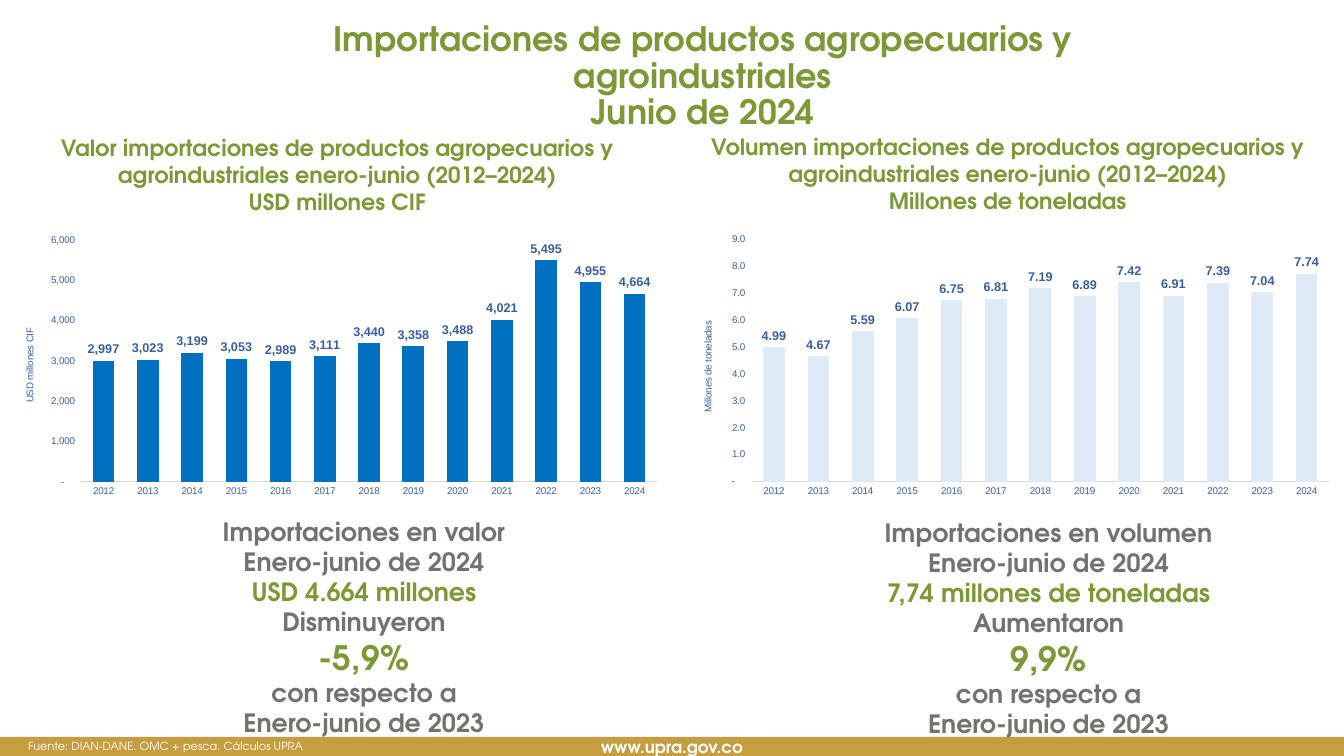
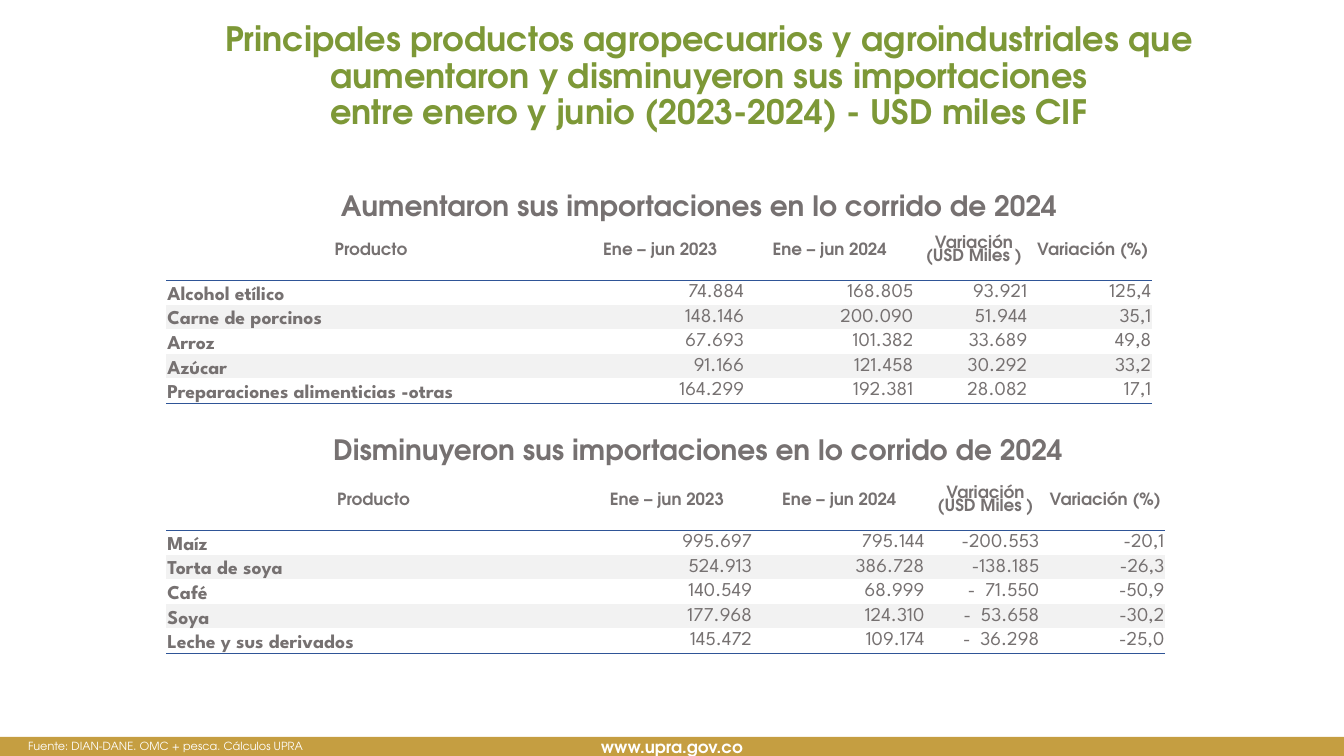
from dataclasses import dataclass
from pptx import Presentation
from pptx.chart.data import CategoryChartData
from pptx.dml.color import RGBColor
from pptx.enum.chart import XL_CHART_TYPE, XL_LABEL_POSITION, XL_TICK_MARK
from pptx.enum.shapes import MSO_SHAPE
from pptx.enum.text import MSO_ANCHOR, PP_ALIGN
from pptx.oxml import parse_xml
from pptx.oxml.ns import nsdecls, qn
from pptx.util import Inches, Pt


@dataclass(frozen=True)
class Theme:
    green: str = "7D9837"
    gray: str = "767171"
    gold: str = "C59E41"
    white: str = "FFFFFF"
    stripe: str = "F2F2F2"
    rule: str = "2F5597"
    label: str = "395F9B"
    axis: str = "D9D9D9"
    head: str = "TeX Gyre Adventor"
    body: str = "League Spartan"
    chart: str = "Arial"
    title: int = 24
    section: int = 20
    fact: int = 18
    subtitle: int = 16
    cell: int = 14
    small: int = 12
    value: int = 9
    source: int = 8
    tick: int = 7


T = Theme()


def write(tf, lines, align=PP_ALIGN.CENTER, bold=True, font=T.head):
    tf.word_wrap = True
    for i, (text, size, color) in enumerate(lines):
        p = tf.add_paragraph() if i else tf.paragraphs[0]
        p.alignment = align
        for j, part in enumerate(text.split("\n")):
            if j:
                p.add_line_break()
            r = p.add_run()
            r.text = part
            r.font.name, r.font.size, r.font.bold = font, Pt(size), bold
            r.font.color.rgb = RGBColor.from_string(color)


def place(parent, index, target, **fractions):
    for old in parent.findall(qn("c:layout")):
        parent.remove(old)
    modes = "".join(f'<c:{k}Mode val="edge"/>' for k in "xy")
    values = "".join(f'<c:{k} val="{v}"/>' for k, v in fractions.items())
    parent.insert(index, parse_xml(
        f'<c:layout {nsdecls("c")}><c:manualLayout>{target}{modes}{values}'
        '</c:manualLayout></c:layout>'))


prs = Presentation()
prs.slide_width, prs.slide_height = Inches(13.33), Inches(7.5)

titles = [
    (2.16, 9.62, "Importaciones de productos agropecuarios y agroindustriales\n"
                 "Junio de 2024"),
    (2.11, 9.84, "Principales productos agropecuarios y agroindustriales que "
                 "aumentaron y disminuyeron sus importaciones\n"
                 "entre enero y junio (2023-2024) - USD miles CIF"),
]
for left, width, title in titles:
    s = prs.slides.add_slide(prs.slide_layouts[5])
    sp = s.shapes.title
    sp.left, sp.top = Inches(left), Inches(0.23)
    sp.width, sp.height = Inches(width), Inches(1.07)
    sp.text_frame.vertical_anchor = MSO_ANCHOR.MIDDLE
    write(sp.text_frame, [(title, T.title, T.green)])
    sp.text_frame.paragraphs[0].line_spacing = 0.9

    band = s.shapes.add_shape(MSO_SHAPE.RECTANGLE, 0, Inches(7.31),
                              prs.slide_width, Inches(0.19))
    band.shadow.inherit = False
    band.fill.solid()
    band.fill.fore_color.rgb = RGBColor.from_string(T.gold)
    band.line.fill.background()
    tf = band.text_frame
    tf.margin_top = tf.margin_bottom = 0
    tf.vertical_anchor = MSO_ANCHOR.MIDDLE
    write(tf, [("www.upra.gov.co", T.small, T.white)])

    source = s.shapes.add_textbox(Inches(0.18), Inches(7.29), Inches(12.91), Inches(0.24))
    write(source.text_frame,
          [("Fuente: DIAN-DANE. OMC + pesca. Cálculos UPRA", T.source, T.white)],
          PP_ALIGN.JUSTIFY, False)

s = prs.slides[0]
years = [str(y) for y in range(2012, 2025)]
thousands = r'_-* #,##0_-;\-* #,##0_-;_-* "-"??_-;_-@_-'
tenths = r'_-* #,##0.0_-;\-* #,##0.0_-;_-* "-"??_-;_-@_-'
panels = [
    dict(kind="Valor", unit="USD millones CIF", sub=(0.02, 1.28), fact=(1.46, 5.07),
         amount="USD 4.664 millones", verb="Disminuyeron", change="-5,9%",
         at=(0, 2.03, 6.62), plot=(0.122, 0.102), axis_title=(0.033, 0.35),
         color="0070C0", top=6000, step=1000, fmt=thousands, label_fmt=thousands,
         values=[2997, 3023, 3199, 3053, 2989, 3111, 3440, 3358, 3488, 4021,
                 5495, 4955, 4664]),
    dict(kind="Volumen", unit="Millones de toneladas", sub=(6.67, 1.27), fact=(8.25, 5.08),
         amount="7,74 millones de toneladas", verb="Aumentaron", change="9,9%",
         at=(6.56, 2, 6.64), plot=(0.135, 0.11), axis_title=(0.058, 0.34),
         color="DEEBF7", top=9, step=1, fmt=tenths, label_fmt="#,##0.00",
         values=[4.99, 4.67, 5.59, 6.07, 6.75, 6.81, 7.19, 6.89, 7.42, 6.91,
                 7.39, 7.04, 7.74]),
]
for d in panels:
    x, y = d["sub"]
    sub = s.shapes.add_textbox(Inches(x), Inches(y), Inches(6.65), Inches(0.91))
    write(sub.text_frame, [
        (f"{d['kind']} importaciones de productos agropecuarios y agroindustriales "
         "enero-junio (2012–2024)", T.subtitle, T.green),
        (d["unit"], T.subtitle, T.green)])

    x, y = d["fact"]
    fact = s.shapes.add_textbox(Inches(x), Inches(y), Inches(4.3), Inches(2.32))
    write(fact.text_frame, [
        (f"Importaciones en {d['kind'].lower()}", T.fact, T.gray),
        ("Enero-junio de 2024", T.fact, T.gray),
        (d["amount"], T.fact, T.green),
        (d["verb"], T.fact, T.gray),
        (d["change"], T.title, T.green),
        ("con respecto a", T.fact, T.gray),
        ("Enero-junio de 2023", T.fact, T.gray)])

    data = CategoryChartData()
    data.categories = years
    data.add_series(d["kind"], d["values"])
    x, y, w = d["at"]
    chart = s.shapes.add_chart(XL_CHART_TYPE.COLUMN_CLUSTERED, Inches(x), Inches(y),
                               Inches(w), Inches(3.44), data).chart
    chart.has_legend = chart.has_title = False
    chart.font.name, chart.font.size = T.chart, Pt(T.tick)
    chart.font.color.rgb = RGBColor.from_string(T.label)
    plot = chart.plots[0]
    plot.vary_by_categories = False
    plot.gap_width, plot.overlap = 105, 74
    series = plot.series[0]
    series.format.fill.solid()
    series.format.fill.fore_color.rgb = RGBColor.from_string(d["color"])

    plot.has_data_labels = True
    labels = plot.data_labels
    labels.show_value = True
    labels.position = XL_LABEL_POSITION.OUTSIDE_END
    labels.number_format, labels.number_format_is_linked = d["label_fmt"], False
    labels.font.name, labels.font.size, labels.font.bold = T.chart, Pt(T.value), True
    labels.font.color.rgb = RGBColor.from_string(T.label)

    cat, val = chart.category_axis, chart.value_axis
    cat.major_tick_mark = val.major_tick_mark = XL_TICK_MARK.NONE
    cat.format.line.color.rgb = RGBColor.from_string(T.axis)
    cat.format.line.width = Pt(0.75)
    val.format.line.fill.background()
    val.has_major_gridlines = False
    val.minimum_scale, val.maximum_scale, val.major_unit = 0, d["top"], d["step"]
    val.tick_labels.number_format = d["fmt"]
    val.tick_labels.number_format_is_linked = False
    write(val.axis_title.text_frame, [(d["unit"], T.tick, T.label)],
          bold=False, font=T.chart)

    x, y = d["axis_title"]
    place(val.axis_title._element, 1, "", x=x, y=y)
    x, y = d["plot"]
    place(chart._chartSpace.xpath(".//c:plotArea")[0], 0,
          '<c:layoutTarget val="inner"/>', x=x, y=y, w=0.862, h=0.698)

s = prs.slides[1]
header = ["Producto", "Ene – jun 2023", "Ene – jun 2024", "Variación\n(USD Miles )",
          "Variación (%)"]
tables = [
    ("Aumentaron", (2.18, 1.82, 9.51), 2.2, [4.06, 1.68, 1.68, 1.18, 1.18], [
        ["Alcohol etílico", "74.884", "168.805", "93.921", "125,4"],
        ["Carne de porcinos", "148.146", "200.090", "51.944", "35,1"],
        ["Arroz", "67.693", "101.382", "33.689", "49,8"],
        ["Azúcar", "91.166", "121.458", "30.292", "33,2"],
        ["Preparaciones alimenticias -otras", "164.299", "192.381", "28.082", "17,1"]]),
    ("Disminuyeron", (1.78, 4.24, 10.29), 4.68, [4.11, 1.71, 1.71, 1.19, 1.19], [
        ["Maíz", "995.697", "795.144", "-200.553", "-20,1"],
        ["Torta de soya", "524.913", "386.728", "-138.185", "-26,3"],
        ["Café", "140.549", "68.999", "-  71.550", "-50,9"],
        ["Soya", "177.968", "124.310", "-  53.658", "-30,2"],
        ["Leche y sus derivados", "145.472", "109.174", "-  36.298", "-25,0"]]),
]
for verb, (x, y, w), top, widths, rows in tables:
    section = s.shapes.add_textbox(Inches(x), Inches(y), Inches(w), Inches(0.44))
    write(section.text_frame,
          [(f"{verb} sus importaciones en lo corrido de 2024", T.section, T.gray)])

    grid = [header] + rows
    table = s.shapes.add_table(len(grid), len(header), Inches(1.65), Inches(top),
                               Inches(sum(widths)), Inches(1.8)).table
    table.first_row = table.horz_banding = False
    style = table._tbl.tblPr.find(qn("a:tableStyleId"))
    style.text = "{2D5ABB26-0587-4C30-8999-92F81FD0307C}"
    for col, width in zip(table.columns, widths):
        col.width = Inches(width)
    for i, row in enumerate(grid):
        table.rows[i].height = Inches((1.8 - 0.58) / len(rows) if i else 0.58)
        for j, text in enumerate(row):
            cell = table.cell(i, j)
            cell.margin_left = cell.margin_right = cell.margin_top = Inches(0.01)
            cell.margin_bottom = 0
            cell.vertical_anchor = MSO_ANCHOR.MIDDLE
            if i == 0:
                write(cell.text_frame, [(text, T.small, T.gray)])
                cell.text_frame.paragraphs[0].line_spacing = 0.8
            elif j == 0:
                cell.vertical_anchor = MSO_ANCHOR.BOTTOM
                write(cell.text_frame, [(text, T.cell, T.gray)], PP_ALIGN.LEFT, font=T.body)
            else:
                if j == 3:
                    cell.margin_right = Inches(0.06)
                write(cell.text_frame, [(text, T.cell, T.gray)], PP_ALIGN.RIGHT, False, T.body)
            if i and i % 2 == 0:
                cell.fill.solid()
                cell.fill.fore_color.rgb = RGBColor.from_string(T.stripe)
            else:
                cell.fill.background()
            if i in (0, len(rows)):
                cell._tc.get_or_add_tcPr().insert(0, parse_xml(
                    f'<a:lnB {nsdecls("a")} w="{Pt(0.25)}"><a:solidFill>'
                    f'<a:srgbClr val="{T.rule}"/></a:solidFill></a:lnB>'))

prs.save("out.pptx")
